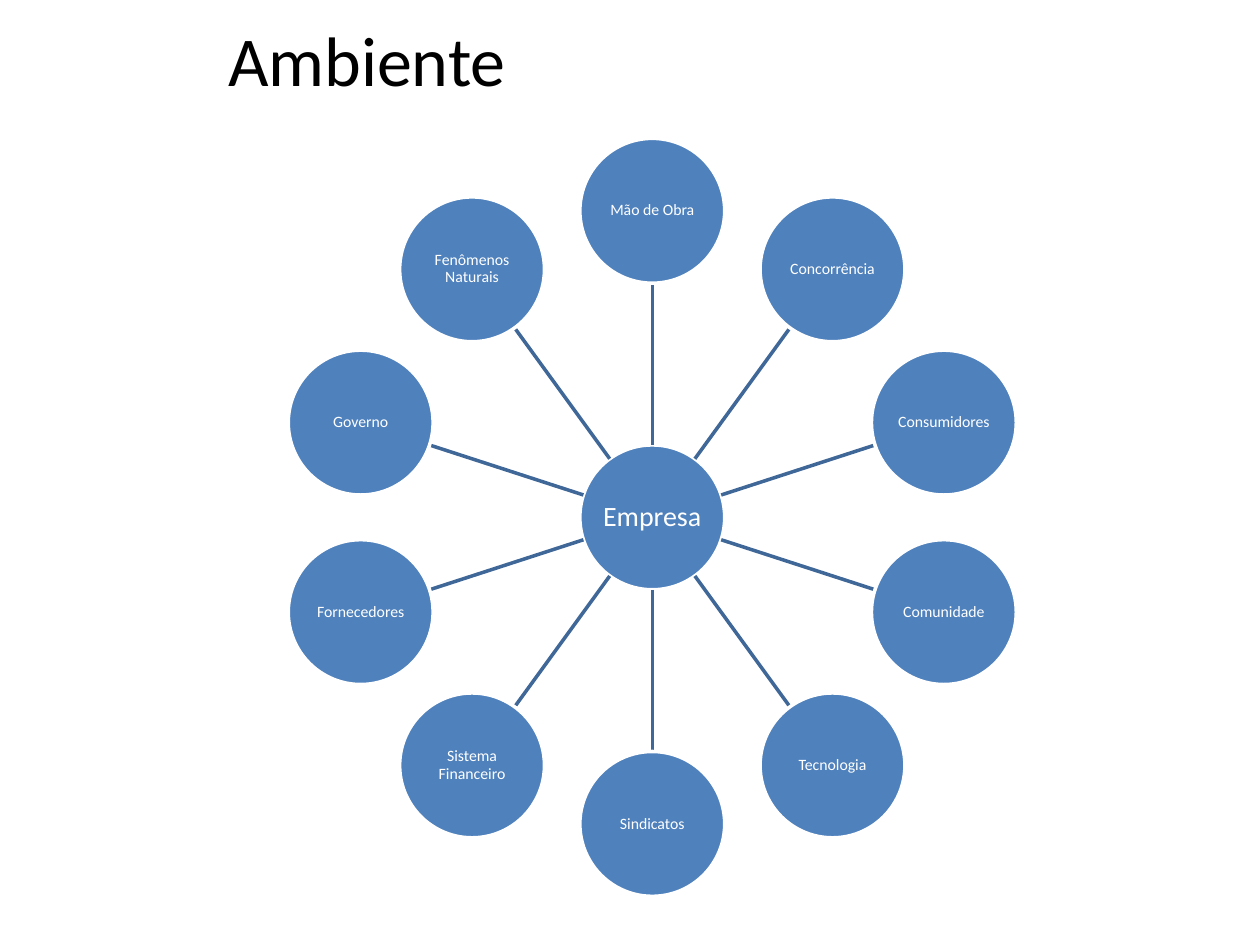
from dataclasses import dataclass
from math import cos, radians, sin

from lxml import etree
from pptx import Presentation
from pptx.dml.color import RGBColor
from pptx.enum.shapes import MSO_CONNECTOR, MSO_SHAPE
from pptx.enum.text import MSO_ANCHOR, PP_ALIGN
from pptx.oxml.ns import qn
from pptx.util import Cm, Pt

ELLIPSE = MSO_SHAPE.OVAL
STRAIGHT = MSO_CONNECTOR.STRAIGHT
MIDDLE = MSO_ANCHOR.MIDDLE
CENTER = PP_ALIGN.CENTER

COLORS = {"circle": "4F81BD", "spoke": "3F6797", "white": "FFFFFF", "black": "000000"}
FONT = "Calibri"

# Wheel geometry in centimetres
HUB_X, HUB_Y = 13.15, 10.43
ORBIT = 6.18
DIAMETER = 2.92


@dataclass
class Circle:
    label: str
    x: float
    y: float
    size: int = 9


FACTORS = [
    "Mão de Obra", "Concorrência", "Consumidores", "Comunidade", "Tecnologia",
    "Sindicatos", "Sistema Financeiro", "Fornecedores", "Governo", "Fenômenos Naturais",
]


def color(name: str) -> RGBColor:
    return RGBColor.from_string(COLORS[name])


def write_text(box, text: str, *, size: int, ink: str, spacing: float = 1.0,
               inset: float | None = None) -> None:
    frame = box.text_frame
    frame.word_wrap = True
    frame.vertical_anchor = MIDDLE
    if inset is not None:
        frame.margin_left = frame.margin_right = Cm(inset)
        frame.margin_top = frame.margin_bottom = Cm(inset)
    para = frame.paragraphs[0]
    para.alignment = CENTER
    para.line_spacing = spacing
    span = para.add_run()
    span.text = text
    span.font.name = FONT
    span.font.size = Pt(size)
    span.font.color.rgb = color(ink)


def point_at(angle: float, distance: float) -> tuple[float, float]:
    """Point around the hub, with the angle clockwise from the top."""
    return HUB_X + distance * sin(angle), HUB_Y - distance * cos(angle)


def draw_circle(page, circle: Circle) -> None:
    shape = page.shapes.add_shape(
        ELLIPSE, Cm(circle.x - DIAMETER / 2), Cm(circle.y - DIAMETER / 2),
        Cm(DIAMETER), Cm(DIAMETER))
    shape.shadow.inherit = False
    shape.fill.solid()
    shape.fill.fore_color.rgb = color("circle")
    shape.line.color.rgb = color("white")
    shape.line.width = Pt(2)
    write_text(shape, circle.label, size=circle.size, ink="white", spacing=0.9, inset=0.03)


def draw_spoke(page, angle: float) -> None:
    start = point_at(angle, DIAMETER / 2)
    end = point_at(angle, ORBIT - DIAMETER / 2)
    spoke = page.shapes.add_connector(STRAIGHT, *(Cm(value) for value in start + end))
    spoke.line.color.rgb = color("spoke")
    spoke.line.width = Pt(2)
    etree.SubElement(spoke.element.spPr, qn("a:effectLst"))


def main() -> None:
    deck = Presentation()
    deck.slide_width, deck.slide_height = Cm(25.4), Cm(19.05)
    page = deck.slides.add_slide(deck.slide_layouts[6])

    # Hub, then each spoke with the circle at its end
    draw_circle(page, Circle("Empresa", HUB_X, HUB_Y, size=16))
    for index, label in enumerate(FACTORS):
        angle = radians(index * 360 / len(FACTORS))
        draw_spoke(page, angle)
        draw_circle(page, Circle(label, *point_at(angle, ORBIT)))

    # Title
    title = page.shapes.add_textbox(Cm(0.69), Cm(0), Cm(13.41), Cm(2.36))
    write_text(title, "Ambiente", size=40, ink="black")

    deck.save("out.pptx")


if __name__ == "__main__":
    main()
